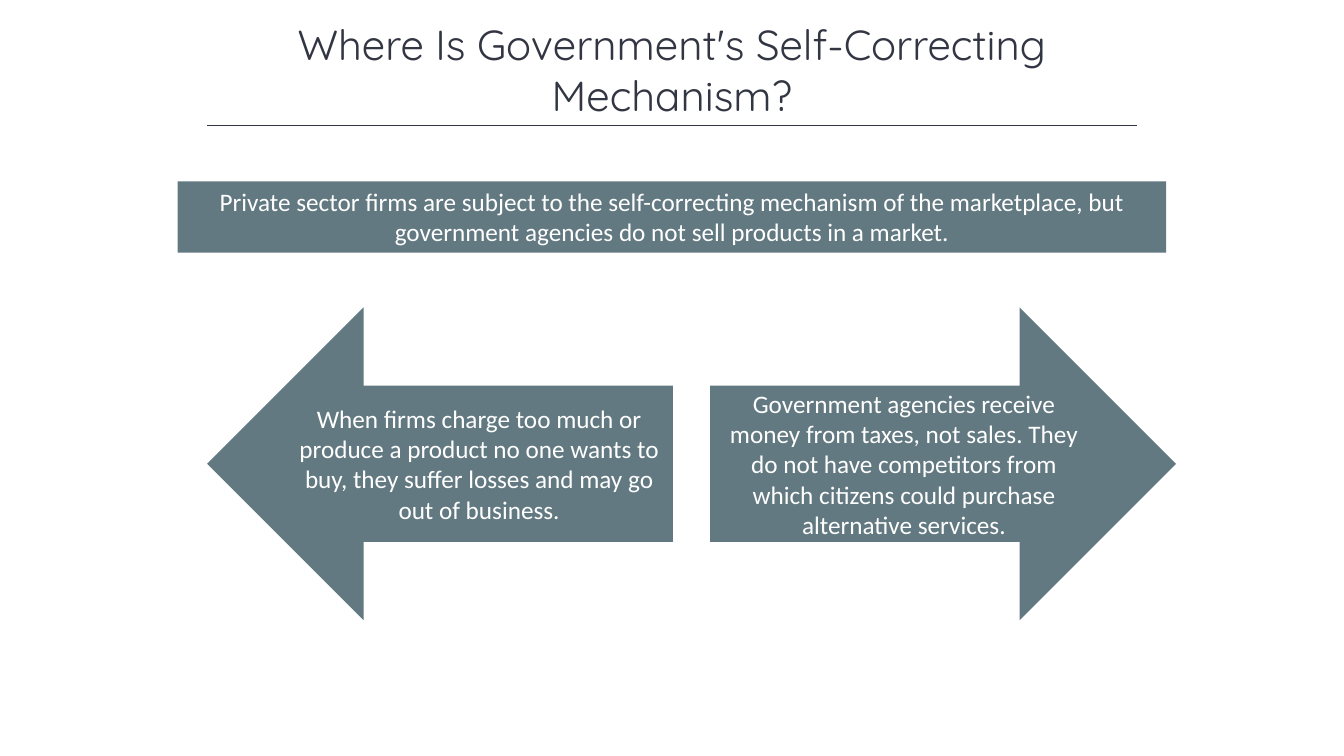
import pptx
import pptx.util
import pptx.dml.color
import pptx.enum.shapes
import pptx.enum.text
from dataclasses import dataclass
from lxml import etree

Pt = pptx.util.Pt
RGB = pptx.dml.color.RGBColor.from_string
SHAPES = pptx.enum.shapes.MSO_SHAPE
ANCHOR = pptx.enum.text.MSO_ANCHOR


@dataclass(frozen=True)
class Theme:
    ink: str = "323542"
    panel: str = "627981"
    panel_text: str = "FFFFFF"
    title_font: str = "Quicksand"
    body_font: str = "Calibri"
    title_size: float = 30
    body_size: float = 18
    rule_width: float = 1


@dataclass(frozen=True)
class Box:
    left: float
    top: float
    width: float
    height: float

    def lengths(self):
        return [Pt(v) for v in (self.left, self.top, self.width, self.height)]


THEME = Theme()


def write(frame, wording, font, size, color, anchor):
    """Fill a text frame with one centred, wrapped paragraph."""
    frame.text = wording
    frame.word_wrap = True
    frame.vertical_anchor = anchor
    paragraph = frame.paragraphs[0]
    paragraph.alignment = pptx.enum.text.PP_ALIGN.CENTER
    run = paragraph.runs[0]
    run.font.name = font
    run.font.size = Pt(size)
    run.font.color.rgb = RGB(color)


def add_heading(slide, box, wording, rule_inset):
    """Place the title in the box and a rule along its lower edge."""
    heading = slide.shapes.add_textbox(*box.lengths())
    write(heading.text_frame, wording, THEME.title_font, THEME.title_size,
          THEME.ink, ANCHOR.TOP)
    rule_y = Pt(box.top + box.height - 0.5)
    rule = slide.shapes.add_connector(
        pptx.enum.shapes.MSO_CONNECTOR.STRAIGHT,
        Pt(box.left + rule_inset), rule_y,
        Pt(box.left + box.width - rule_inset), rule_y)
    rule.line.color.rgb = RGB(THEME.ink)
    rule.line.width = Pt(THEME.rule_width)
    properties = rule.element.spPr
    etree.SubElement(properties, pptx.oxml.ns.qn("a:effectLst"))


def add_panel(slide, preset, box, wording, anchor=ANCHOR.MIDDLE):
    panel = slide.shapes.add_shape(preset, *box.lengths())
    panel.shadow.inherit = False
    panel.fill.solid()
    panel.fill.fore_color.rgb = RGB(THEME.panel)
    panel.line.fill.background()
    write(panel.text_frame, wording, THEME.body_font, THEME.body_size,
          THEME.panel_text, anchor)


def add_opposing_arrows(slide, box, gap, left_wording, right_wording):
    """Split the box into two arrows that point away from each other."""
    width = (box.width - gap) / 2
    arrows = [(SHAPES.LEFT_ARROW, left_wording),
              (SHAPES.RIGHT_ARROW, right_wording)]
    for index, (preset, wording) in enumerate(arrows):
        left = box.left + index * (width + gap)
        add_panel(slide, preset, Box(left, box.top, width, box.height), wording)


def main():
    deck = pptx.Presentation()
    deck.slide_width, deck.slide_height = Pt(960), Pt(540)
    slide = deck.slides.add_slide(deck.slide_layouts[6])

    add_heading(slide, Box(120, 10, 720, 80),
                "Where Is Government's Self-Correcting Mechanism?",
                rule_inset=28)
    add_opposing_arrows(
        slide, Box(148, 219.6, 692, 223.4), 26.6,
        "When firms charge too much or produce a product no one wants to buy, "
        "they suffer losses and may go out of business.",
        "Government agencies receive money from taxes, not sales. They do not "
        "have competitors from which citizens could purchase alternative "
        "services.")
    add_panel(
        slide, SHAPES.RECTANGLE, Box(127, 129.5, 706, 51),
        "Private sector firms are subject to the self-correcting mechanism of "
        "the marketplace, but government agencies do not sell products in a "
        "market.", ANCHOR.TOP)

    deck.save("out.pptx")


if __name__ == "__main__":
    main()
